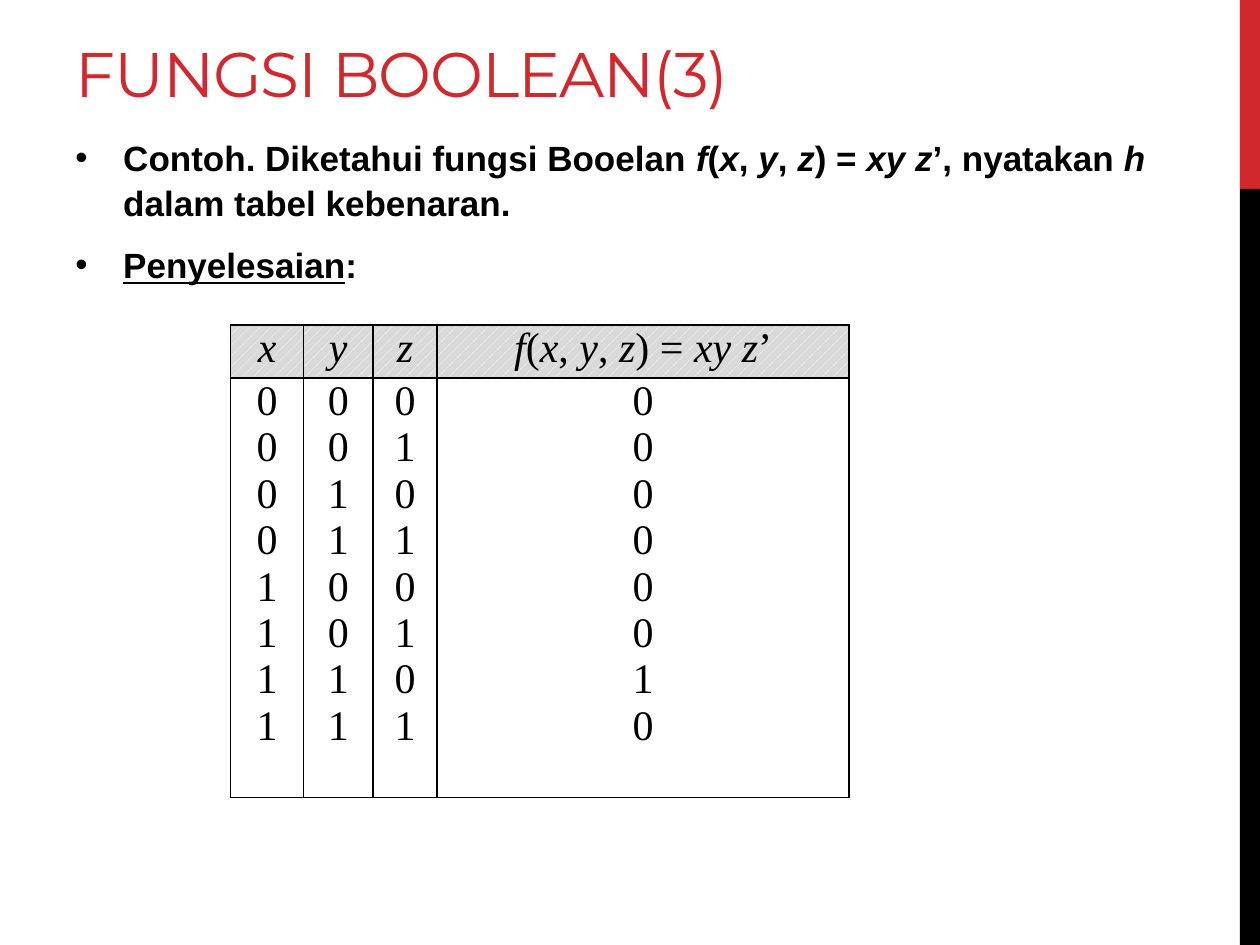
import itertools

import pptx
import pptx.dml.color
import pptx.enum.dml
import pptx.enum.shapes
import pptx.enum.text
import pptx.oxml
import pptx.oxml.ns
import pptx.util

RED = pptx.dml.color.RGBColor(0xD1, 0x28, 0x2E)
BLACK = pptx.dml.color.RGBColor(0, 0, 0)
WHITE = pptx.dml.color.RGBColor(0xFF, 0xFF, 0xFF)
GREY = pptx.dml.color.RGBColor(0xD9, 0xD9, 0xD9)

COLUMNS, ROWS = 100, 75
SLIDE_WIDTH = pptx.util.Inches(10)
SLIDE_HEIGHT = pptx.util.Inches(7.5)

VARIABLES = ["x", "y", "z"]
VARIABLE_WIDTHS = [5.8, 5.5, 5.1]
FUNCTION_WIDTH = 32.7


def col(count):
    return round(SLIDE_WIDTH * count / COLUMNS)


def row(count):
    return round(SLIDE_HEIGHT * count / ROWS)


def grid_box(left, top, width, height):
    return col(left), row(top), col(width), row(height)


def set_font(font, name, size, color, bold=False):
    font.name = name
    font.size = pptx.util.Pt(size)
    font.color.rgb = color
    font.bold = bold


def write_runs(paragraph, marked_text, emphasis="italic"):
    """Fill a paragraph; parts between asterisks get the named emphasis."""
    for index, part in enumerate(marked_text.split("*")):
        if part:
            run = paragraph.add_run()
            run.text = part
            setattr(run.font, emphasis, index % 2 == 1)


def add_side_band(slide, top, height, color):
    band = slide.shapes.add_shape(
        pptx.enum.shapes.MSO_SHAPE.RECTANGLE, *grid_box(98.4, top, 1.6, height))
    band.shadow.inherit = False
    band.fill.solid()
    band.fill.fore_color.rgb = color
    band.line.fill.background()


def add_title(slide, title):
    frame = slide.shapes.add_textbox(*grid_box(5, 1.7, 63.3, 7.5)).text_frame
    frame.word_wrap = True
    frame.vertical_anchor = pptx.enum.text.MSO_ANCHOR.BOTTOM
    frame.text = title
    run = frame.paragraphs[0].runs[0]
    set_font(run.font, "Montserrat", 36, RED)
    run.font._element.set("spc", "-60")


def add_bullet(paragraph, marked_text, emphasis):
    properties = paragraph._p.get_or_add_pPr()
    properties.set("marL", str(col(3.8)))
    properties.set("indent", str(-col(3.8)))
    properties.append(pptx.oxml.parse_xml(
        f'<a:buFont {pptx.oxml.ns.nsdecls("a")} typeface="Arial"/>'))
    properties.append(pptx.oxml.parse_xml(
        f'<a:buChar {pptx.oxml.ns.nsdecls("a")} char="•"/>'))
    paragraph.line_spacing = 1.07
    paragraph.space_after = pptx.util.Pt(6)
    write_runs(paragraph, marked_text, emphasis)
    for run in paragraph.runs:
        set_font(run.font, "Arial", 20, BLACK, bold=True)


def add_problem(slide):
    frame = slide.shapes.add_textbox(*grid_box(5, 10.1, 90, 57)).text_frame
    frame.word_wrap = True
    add_bullet(
        frame.paragraphs[0],
        "Contoh. Diketahui fungsi Booelan *f*(*x*, *y*, *z*) = *xy z*’, "
        "nyatakan *h *dalam tabel kebenaran.", "italic")
    solution = frame.add_paragraph()
    add_bullet(solution, "*Penyelesaian*:", "underline")
    solution.space_before = pptx.util.Pt(4)


def draw_borders(cell):
    properties = cell._tc.get_or_add_tcPr()
    for index, side in enumerate(("lnL", "lnR", "lnT", "lnB")):
        properties.insert(index, pptx.oxml.parse_xml(
            f'<a:{side} {pptx.oxml.ns.nsdecls("a")} w="12700"><a:solidFill>'
            f'<a:srgbClr val="{BLACK}"/></a:solidFill></a:{side}>'))


def fill_cell(cell, marked_lines):
    cell.margin_left = cell.margin_right = col(0.7)
    cell.margin_top = cell.margin_bottom = 0
    frame = cell.text_frame
    for index, line in enumerate(marked_lines):
        paragraph = frame.add_paragraph() if index else frame.paragraphs[0]
        paragraph.alignment = pptx.enum.text.PP_ALIGN.CENTER
        write_runs(paragraph, line)
        for run in paragraph.runs:
            set_font(run.font, "Times New Roman", 24, BLACK)
    draw_borders(cell)


def shade_header(cell):
    cell.fill.patterned()
    cell.fill.pattern = pptx.enum.dml.MSO_PATTERN.PERCENT_20
    cell.fill.fore_color.rgb = WHITE
    cell.fill.back_color.rgb = GREY


def add_truth_table(slide):
    inputs = list(itertools.product((0, 1), repeat=len(VARIABLES)))
    outputs = [x & y & (1 - z) for x, y, z in inputs]
    headers = [f"*{name}*" for name in VARIABLES]
    headers.append("*f*(*x*, *y*, *z*) = *xy z*’")
    value_columns = [*zip(*inputs), outputs]
    widths = [*VARIABLE_WIDTHS, FUNCTION_WIDTH]

    table = slide.shapes.add_table(
        2, len(headers), *grid_box(18.3, 25.8, sum(widths), 37.5)).table
    table.first_row = table.horz_banding = False
    table.rows[0].height = row(4.2)
    table.rows[1].height = row(33.3)
    for index, (header, values, width) in enumerate(
            zip(headers, value_columns, widths)):
        table.columns[index].width = col(width)
        header_cell, value_cell = table.cell(0, index), table.cell(1, index)
        fill_cell(header_cell, [header])
        shade_header(header_cell)
        fill_cell(value_cell, [str(value) for value in values])
        value_cell.fill.background()


def main():
    presentation = pptx.Presentation()
    presentation.slide_width = SLIDE_WIDTH
    presentation.slide_height = SLIDE_HEIGHT
    slide = presentation.slides.add_slide(presentation.slide_layouts[6])
    add_side_band(slide, 0, 15, RED)
    add_side_band(slide, 15, 60, BLACK)
    add_title(slide, "FUNGSI BOOLEAN(3)")
    add_problem(slide)
    add_truth_table(slide)
    presentation.save("out.pptx")


if __name__ == "__main__":
    main()
